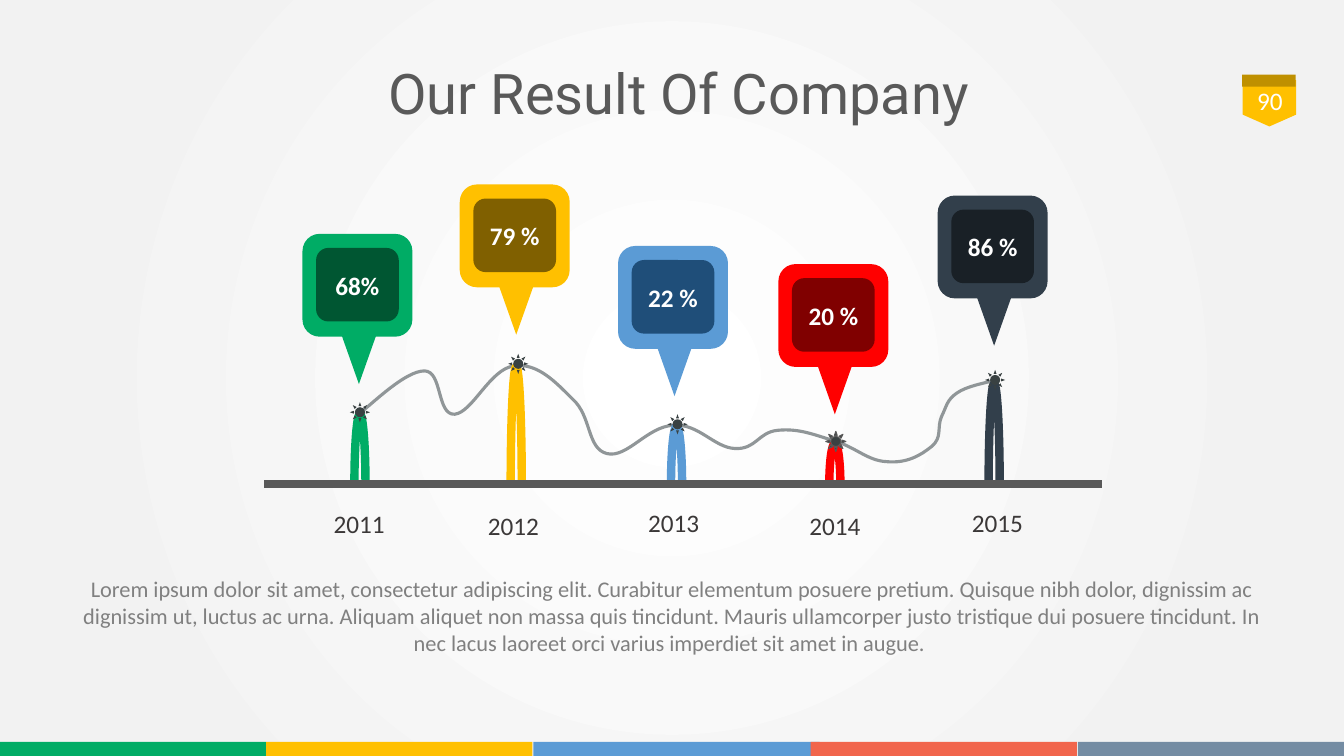
from itertools import chain

from lxml import etree
from pptx import Presentation
from pptx.dml.color import RGBColor as RGB
from pptx.enum.shapes import MSO_CONNECTOR as CONNECTOR, MSO_SHAPE as SHAPE
from pptx.enum.text import MSO_ANCHOR as ANCHOR, PP_ALIGN as ALIGN
from pptx.oxml.ns import qn
from pptx.util import Inches, Pt

TITLE = "Our Result Of Company"
PAGE = "90"
BODY = (
    "Lorem ipsum dolor sit amet, consectetur adipiscing elit. Curabitur elementum posuere pretium. "
    "Quisque nibh dolor, dignissim ac dignissim ut, luctus ac urna. Aliquam aliquet non massa quis "
    "tincidunt. Mauris ullamcorper justo tristique dui posuere tincidunt. In nec lacus laoreet orci "
    "varius imperdiet sit amet in augue. "
)
YEARS = [
    dict(year="2011", share="68%", color="00AC65", dark="005632", callout=(3, 2.32), peak=(3.57, 4.11), sun=(3.47, 3.99), label=(3.21, 4.99)),
    dict(year="2012", share="79 %", color="FFC000", dark="806000", callout=(4.56, 1.83), peak=(5.12, 3.64), sun=(5.04, 3.51), label=(4.74, 5.01)),
    dict(year="2013", share="22 %", color="5B9BD5", dark="1F4E79", callout=(6.13, 2.44), peak=(6.71, 4.23), sun=(6.62, 4.11), label=(6.33, 4.98)),
    dict(year="2014", share="20 %", color="FF0000", dark="800000", callout=(7.72, 2.62), peak=(8.28, 4.4), sun=(8.19, 4.28), label=(7.93, 5.01)),
    dict(year="2015", share="86 %", color="323F4B", dark="192026", callout=(9.3, 1.94), peak=(9.86, 3.81), sun=(9.77, 3.67), label=(9.54, 4.98)),
]
TREND_START = (3.58, 4.09)
TREND = [
    ((3.7, 4), (4.02, 3.68), (4.21, 3.68)),
    ((4.39, 3.68), (4.33, 4.12), (4.51, 4.11)),
    ((4.69, 4.09), (4.86, 3.66), (5.1, 3.63)),
    ((5.33, 3.6), (5.5, 3.78), (5.68, 3.96)),
    ((5.87, 4.13), (5.82, 4.45), (6.02, 4.5)),
    ((6.22, 4.55), (6.42, 4.23), (6.68, 4.22)),
    ((6.93, 4.2), (7.08, 4.44), (7.29, 4.45)),
    ((7.5, 4.46), (7.52, 4.29), (7.71, 4.27)),
    ((7.91, 4.25), (8.04, 4.3), (8.26, 4.37)),
    ((8.48, 4.43), (8.6, 4.57), (8.79, 4.58)),
    ((8.99, 4.6), (9.13, 4.52), (9.24, 4.43)),
    ((9.35, 4.34), (9.29, 4.24), (9.34, 4.13)),
    ((9.39, 4.03), (9.39, 3.97), (9.49, 3.9)),
    ((9.59, 3.83), (9.77, 3.8), (9.84, 3.78)),
    ((9.92, 3.75), (9.87, 3.77), (9.87, 3.78)),
]
STRIPS = [(0, 2.64, "00AC65"), (5.29, 2.84, "5B9BD5"), (10.69, 2.64, "748CA3"),
          (8.04, 2.64, "F1654C"), (2.64, 2.64, "FFC000")]
THEME = dict(
    font="Calibri", title_font="Roboto", title=40, normal=18, body=16,
    heading="595959", white="FFFFFF", label="3B3838", muted="808080",
    badge="FFC000", badge_dark="BF9000", trend="909698", marker="394142", axis="595959",
    background=[(0, "FFFFFF"), (81, "F2F2F2"), (100, "F2F2F2")],
)
BASE_Y = 4.8
HALF_STEM = 0.055

prs = Presentation()
prs.slide_width, prs.slide_height = Inches(13.33), Inches(7.5)
slide = prs.slides.add_slide(prs.slide_layouts[6])


def paint_background():
    slide.background.fill.gradient()
    grad = slide.element.find(".//" + qn("a:gradFill"))
    for child in list(grad):
        grad.remove(child)
    stops = etree.SubElement(grad, qn("a:gsLst"))
    for pos, color in THEME["background"]:
        stop = etree.SubElement(stops, qn("a:gs"), pos=str(pos * 1000))
        etree.SubElement(stop, qn("a:srgbClr"), val=color)
    circle = etree.SubElement(grad, qn("a:path"), path="circle")
    etree.SubElement(circle, qn("a:fillToRect"), {side: "50000" for side in "ltrb"})


def set_line(sp, color, width):
    sp.line.color.rgb = RGB.from_string(color)
    sp.line.width = Pt(width)


def add_block(kind, x, y, w, h, color, rotation=0, adj=None):
    sp = slide.shapes.add_shape(kind, Inches(x), Inches(y), Inches(w), Inches(h))
    sp.shadow.inherit = False
    sp.rotation = rotation
    if adj is not None:
        sp.adjustments[0] = adj
    sp.fill.solid()
    sp.fill.fore_color.rgb = RGB.from_string(color)
    sp.line.fill.background()
    return sp


def add_text(text, x, y, w, h, color, size=THEME["normal"], font=THEME["font"], bold=False,
             align=ALIGN.CENTER, anchor=ANCHOR.TOP, spacing=None, inset=(0.1, 0.05)):
    tf = slide.shapes.add_textbox(Inches(x), Inches(y), Inches(w), Inches(h)).text_frame
    side, edge = map(Inches, inset)
    frame = dict(word_wrap=True, vertical_anchor=anchor, margin_left=side, margin_right=side,
                 margin_top=edge, margin_bottom=edge)
    p = tf.paragraphs[0]
    r = p.add_run()
    r.text = text
    for target, values in ((tf, frame), (p, dict(alignment=align, line_spacing=spacing)),
                           (r.font, dict(name=font, size=Pt(size), bold=bold))):
        for name, value in values.items():
            setattr(target, name, value)
    r.font.color.rgb = RGB.from_string(color)


def add_curve(start, curves, color, width):
    points = [(Inches(x), Inches(y)) for x, y in chain([start], *curves)]
    builder = slide.shapes.build_freeform(*points[0])
    builder.add_line_segments(points[1:], close=False)
    sp = builder.convert_to_shape()
    segments = list(sp.element.iter(qn("a:lnTo")))
    outline = segments[0].getparent()
    for i in range(0, len(segments), 3):
        cubic = etree.SubElement(outline, qn("a:cubicBezTo"))
        for segment in segments[i:i + 3]:
            cubic.append(segment[0])
            outline.remove(segment)
    sp.shadow.inherit = False
    sp.fill.background()
    set_line(sp, color, width)


def add_callout(item):
    x, y = item["callout"]
    add_block(SHAPE.ROUNDED_RECTANGLE, x, y, 1.09, 1.02, item["color"], adj=0.167)
    add_block(SHAPE.ROUNDED_RECTANGLE, x + 0.135, y + 0.14, 0.82, 0.73, item["dark"], adj=0.167)
    add_block(SHAPE.ISOSCELES_TRIANGLE, x + 0.39, y + 1.01, 0.34, 0.48, item["color"], rotation=180)
    add_text(item["share"], x, y + 0.31, 1.09, 0.4, THEME["white"], bold=True)


def add_stem(item):
    x, top = item["peak"]
    left, right = x - HALF_STEM, x + HALF_STEM
    shoulder = top + (BASE_Y - top) * 0.45
    add_curve((left, BASE_Y), [((left, shoulder), (x - 0.03, top), (x, top)),
                               ((x + 0.03, top), (right, shoulder), (right, BASE_Y))],
              item["color"], 6)
    sun = add_block(SHAPE.SUN, *item["sun"], 0.2, 0.2, THEME["marker"])
    if item["year"] == "2014":
        set_line(sun, THEME["axis"], 0.75)


paint_background()
add_block(SHAPE.PENTAGON, 12.36, 0.76, 0.46, 0.53, THEME["badge"], rotation=90, adj=0.255)
add_block(SHAPE.RECTANGLE, 12.32, 0.74, 0.53, 0.12, THEME["badge_dark"])
for x, width, color in STRIPS:
    add_block(SHAPE.RECTANGLE, x, 7.36, width, 0.14, color)
add_text(TITLE, 0.88, 0.56, 11.7, 0.8, THEME["heading"], THEME["title"], THEME["title_font"],
         anchor=ANCHOR.MIDDLE, spacing=0.9)
add_text(PAGE, 12.29, 0.74, 0.61, 0.52, THEME["white"], anchor=ANCHOR.MIDDLE)
for item in YEARS:
    add_callout(item)
add_curve(TREND_START, TREND, THEME["trend"], 2.25)
for item in YEARS:
    add_stem(item)
axis = slide.shapes.add_connector(CONNECTOR.STRAIGHT, Inches(2.62), Inches(BASE_Y),
                                  Inches(10.93), Inches(BASE_Y))
set_line(axis, THEME["axis"], 6)
etree.SubElement(axis.element.spPr, qn("a:effectLst"))
for item in YEARS:
    add_text(item["year"], *item["label"], 0.71, 0.4, THEME["label"], align=ALIGN.LEFT)
add_text(BODY, 0.68, 5.64, 11.97, 0.89, THEME["muted"], THEME["body"], inset=(0.13, 0.07))
prs.save("out.pptx")
